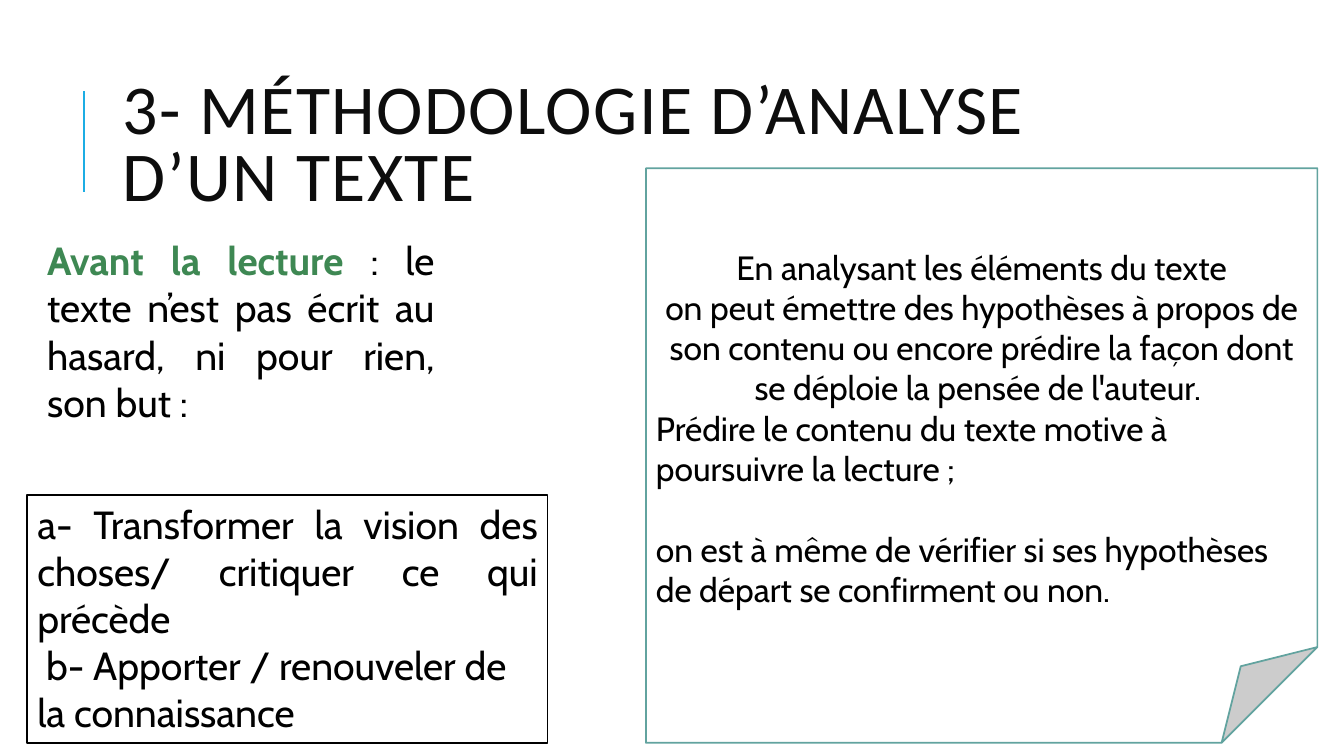
from dataclasses import dataclass

from lxml import etree
from pptx import Presentation, util as u
from pptx.dml.color import RGBColor
from pptx.enum import shapes, text
from pptx.oxml.ns import qn


@dataclass(frozen=True)
class Theme:
    heading_font: str = "Calibri"
    body_font: str = "Cabin"
    title_size: int = 50
    body_size: int = 28
    note_size: int = 24
    white: RGBColor = RGBColor(0xFF, 0xFF, 0xFF)
    black: RGBColor = RGBColor(0x00, 0x00, 0x00)
    title: RGBColor = RGBColor(0x0D, 0x0D, 0x0D)
    rule: RGBColor = RGBColor(0x1C, 0xAD, 0xE4)
    emphasis: RGBColor = RGBColor(0x3E, 0x88, 0x53)
    note: RGBColor = RGBColor(0x62, 0xA3, 0x9F)


THEME = Theme()
LEFT, CENTER, JUSTIFY = (text.PP_ALIGN.LEFT, text.PP_ALIGN.CENTER,
                         text.PP_ALIGN.JUSTIFY)


def style(p, size, align=LEFT, font=THEME.body_font, color=THEME.black):
    p.alignment = align
    p.font.name = font
    p.font.size = u.Pt(size)
    p.font.color.rgb = color


def write(tf, paragraphs, size):
    for i, (words, align, gap) in enumerate(paragraphs):
        p = tf.paragraphs[0] if i == 0 else tf.add_paragraph()
        p.text = words
        p.space_before = u.Pt(gap)
        style(p, size, align)


def outlined(s, kind, box, color):
    sp = s.shapes.add_shape(kind, *map(u.Cm, box))
    sp.shadow.inherit = False
    sp.fill.solid()
    sp.fill.fore_color.rgb = THEME.white
    sp.line.color.rgb = color
    sp.line.width = u.Pt(1.25)
    sp.text_frame.word_wrap = True
    return sp


def add_heading(s, box):
    left, top, width, height = box
    x = u.Cm(left - 0.73)
    rule = s.shapes.add_connector(shapes.MSO_CONNECTOR.STRAIGHT,
                                  x, u.Cm(top + 3.18), x, u.Cm(top + 0.64))
    rule.line.color.rgb = THEME.rule
    rule.line.width = u.Pt(1.5)
    etree.SubElement(rule._element.spPr, qn("a:effectLst"))

    title = s.shapes.title
    title.left, title.top, title.width, title.height = map(u.Cm, box)
    tf = title.text_frame
    tf.word_wrap = True
    tf.auto_size = text.MSO_AUTO_SIZE.NONE
    tf.vertical_anchor = text.MSO_ANCHOR.MIDDLE
    p = tf.paragraphs[0]
    r = p.add_run()
    r.text = "3- MÉTHODOLOGIE D’ANALYSE D’UN TEXTE"
    p.line_spacing = 0.8
    style(p, THEME.title_size, font=THEME.heading_font, color=THEME.title)
    r._r.get_or_add_rPr().set("spc", "100")


def add_before_reading(s, box):
    tf = s.shapes.add_textbox(*map(u.Cm, box)).text_frame
    tf.word_wrap = True
    tf.auto_size = text.MSO_AUTO_SIZE.SHAPE_TO_FIT_TEXT
    p = tf.paragraphs[0]
    style(p, THEME.body_size, JUSTIFY)
    r = p.add_run()
    r.text = "Avant la lecture "
    r.font.bold = True
    r.font.color.rgb = THEME.emphasis
    p.add_run().text = ": le texte n’est pas écrit au hasard, ni pour rien, son but : "


def add_goals(s, box):
    sp = outlined(s, shapes.MSO_SHAPE.RECTANGLE, box, THEME.black)
    tf = sp.text_frame
    tf.auto_size = text.MSO_AUTO_SIZE.SHAPE_TO_FIT_TEXT
    tf.vertical_anchor = text.MSO_ANCHOR.TOP
    write(tf, [
        ("a- Transformer la vision des choses/ critiquer ce qui précède", JUSTIFY, 0),
        (" b- Apporter / renouveler de la connaissance", LEFT, 0),
    ], THEME.body_size)


def add_note(s, box):
    sp = outlined(s, shapes.MSO_SHAPE.FOLDED_CORNER, box, THEME.note)
    tf = sp.text_frame
    tf.vertical_anchor = text.MSO_ANCHOR.MIDDLE
    tf.margin_top = u.Cm(1.15)
    write(tf, [
        ("En analysant les éléments du texte", CENTER, 0),
        ("on peut émettre des hypothèses à propos de son contenu ou encore "
         "prédire la façon dont se déploie la pensée de l'auteur. ", CENTER, 0),
        ("Prédire le contenu du texte motive à poursuivre la lecture ;", LEFT, 0),
        ("on est à même de vérifier si ses hypothèses de départ se confirment "
         "ou non.", LEFT, 29),
    ], THEME.note_size)


def main():
    prs = Presentation()
    prs.slide_width, prs.slide_height = u.Cm(33.87), u.Cm(19.05)
    s = prs.slides.add_slide(prs.slide_layouts.get_by_name("Title Only"))
    s.background.fill.solid()
    s.background.fill.fore_color.rgb = THEME.white
    add_heading(s, (2.84, 1.65, 27, 4.17))
    add_before_reading(s, (0.94, 5.84, 10.26, 5.05))
    add_goals(s, (0.69, 12.47, 13.11, 6.25))
    add_note(s, (16.28, 4.24, 16.92, 14.48))
    prs.save("out.pptx")


if __name__ == "__main__":
    main()
